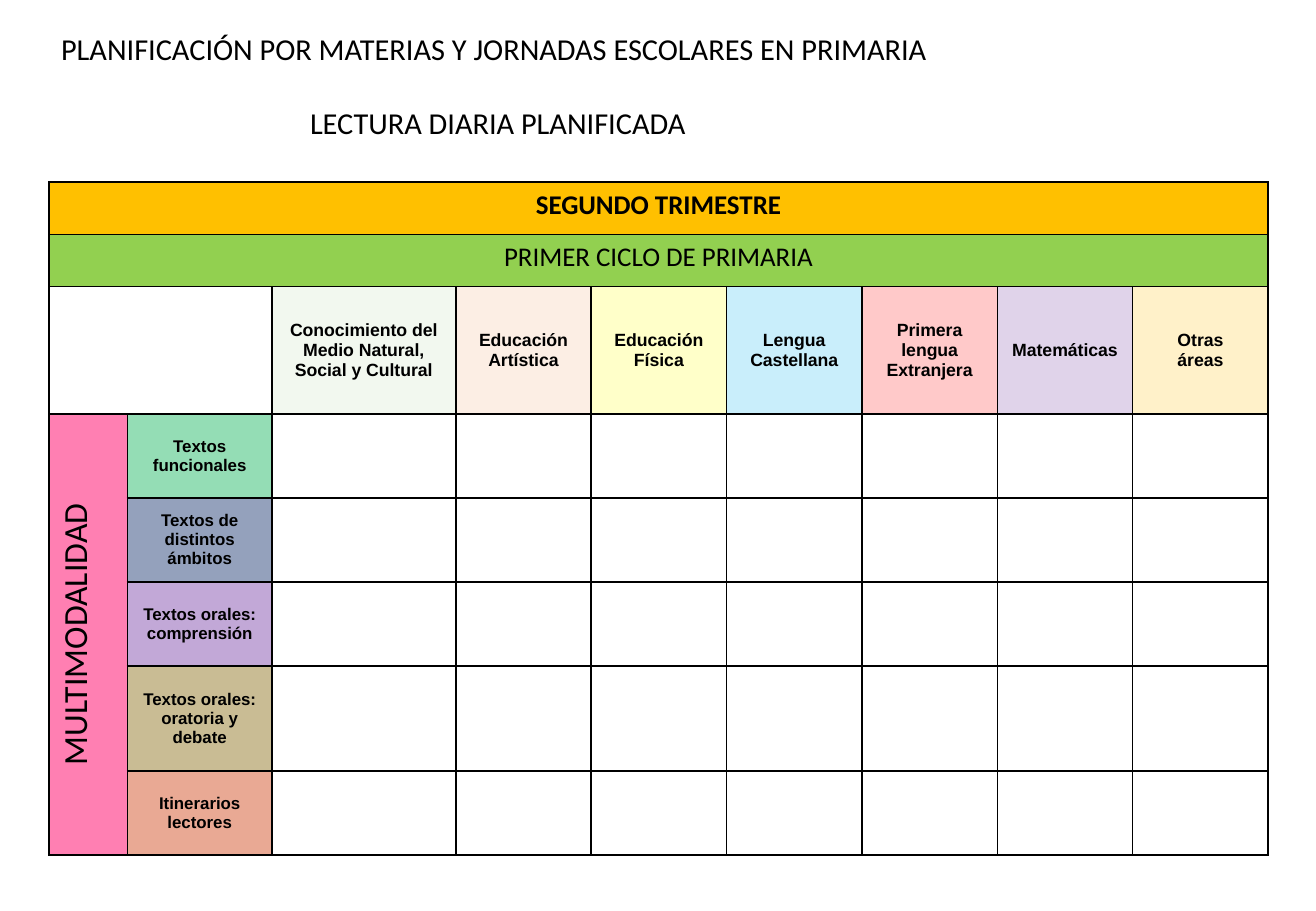
from pptx import Presentation
from pptx.dml.color import RGBColor
from pptx.enum import text
from pptx.oxml import parse_xml
from pptx.oxml import ns
from pptx.util import Pt

COLORS = {
    "ink": "000000", "paper": "FFFFFF", "gold": "FFC000", "lime": "92D050",
    "sage": "C5E0B4", "peach": "F4B183", "yellow": "FFFF00", "sky": "00B0F0",
    "red": "FF0000", "purple": "7030A0", "pink": "FF0066", "green": "00B050",
    "navy": "002060", "olive": "806000", "rust": "CC3300",
}
LEFT = 29
COLUMN_WIDTHS = [46.5, 85.7, 109] + [80.25] * 6
ROW_HEIGHTS = [31, 31, 75.5, 49.8, 49.8, 49.8, 62.2, 49.8]
SUBJECTS = [
    (["Conocimiento del Medio Natural, Social y Cultural"], "sage"),
    (["Educación", "Artística"], "peach"),
    (["Educación Física"], "yellow"),
    (["Lengua Castellana"], "sky"),
    (["Primera lengua Extranjera"], "red"),
    (["Matemáticas"], "purple"),
    (["Otras", "áreas"], "gold"),
]
TEXT_KINDS = [
    (["Textos", "funcionales"], "green"),
    (["Textos de distintos ámbitos"], "navy"),
    (["Textos orales: comprensión"], "purple"),
    (["Textos orales: oratoria y debate"], "olive"),
    (["Itinerarios lectores"], "rust"),
]


def write_lines(frame, lines, size, font, bold=False, align=text.PP_ALIGN.CENTER):
    """Write one paragraph for each line and return the paragraphs."""
    paras = []
    for index, line in enumerate(lines):
        para = frame.add_paragraph() if index else frame.paragraphs[0]
        para.alignment = align
        span = para.add_run()
        span.text = line
        span.font.size = Pt(size)
        span.font.name = font
        span.font.bold = bold
        span.font.color.rgb = RGBColor.from_string(COLORS["ink"])
        paras.append(para)
    return paras


def fill_cell(cell, color, opacity=100):
    cell.fill.solid()
    cell.fill.fore_color.rgb = RGBColor.from_string(COLORS[color])
    if opacity < 100:
        tint = cell._tc.tcPr.find(".//" + ns.qn("a:solidFill") + "[last()]/" + ns.qn("a:srgbClr"))
        tint = cell._tc.tcPr.find(ns.qn("a:solidFill")).find(ns.qn("a:srgbClr"))
        tint.append(parse_xml(f'<a:alpha {ns.nsdecls("a")} val="{opacity * 1000}"/>'))


def border_cell(cell):
    properties = cell._tc.get_or_add_tcPr()
    for side in ("lnL", "lnR", "lnT", "lnB"):
        properties.append(parse_xml(
            f'<a:{side} {ns.nsdecls("a")} w="{Pt(1)}"><a:solidFill>'
            f'<a:srgbClr val="{COLORS["ink"]}"/></a:solidFill></a:{side}>'))


def label_cell(cell, lines, size, color, opacity):
    cell.vertical_anchor = text.MSO_ANCHOR.MIDDLE
    write_lines(cell.text_frame, lines, size, "Arial", bold=True)
    fill_cell(cell, color, opacity)


def add_heading(page):
    title = page.shapes.title
    title.left, title.top, title.width, title.height = Pt(LEFT), Pt(14.4), Pt(722), Pt(73)
    frame = title.text_frame
    frame.word_wrap = True
    frame.auto_size = text.MSO_AUTO_SIZE.NONE
    frame.vertical_anchor = text.MSO_ANCHOR.TOP
    frame.margin_right = Pt(197)
    lines = ["PLANIFICACIÓN POR MATERIAS Y JORNADAS ESCOLARES EN PRIMARIA",
             "LECTURA DIARIA PLANIFICADA"]
    first, second = write_lines(frame, lines, 18, "Calibri")
    first.alignment = text.PP_ALIGN.LEFT
    second.space_before = Pt(22)


def add_grid(page):
    """Add the bordered, blank planning table."""
    grid = page.shapes.add_table(
        len(ROW_HEIGHTS), len(COLUMN_WIDTHS), Pt(LEFT), Pt(108),
        Pt(sum(COLUMN_WIDTHS)), Pt(sum(ROW_HEIGHTS))).table
    grid.first_row = grid.horz_banding = False
    for column, width in zip(grid.columns, COLUMN_WIDTHS):
        column.width = Pt(width)
    for row, height in zip(grid.rows, ROW_HEIGHTS):
        row.height = Pt(height)
    for cell in grid.iter_cells():
        border_cell(cell)
        fill_cell(cell, "paper")
    return grid


def fill_grid(grid):
    banners = [("SEGUNDO TRIMESTRE", "gold", True), ("PRIMER CICLO DE PRIMARIA", "lime", False)]
    for row, (wording, color, bold) in enumerate(banners):
        banner = grid.cell(row, 0)
        banner.merge(grid.cell(row, len(COLUMN_WIDTHS) - 1))
        write_lines(banner.text_frame, [wording], 16, "Calibri", bold)
        fill_cell(banner, color)

    grid.cell(2, 0).merge(grid.cell(2, 1))
    for column, (lines, color) in enumerate(SUBJECTS, start=2):
        label_cell(grid.cell(2, column), lines, 10.5, color, 21)
    for row, (lines, color) in enumerate(TEXT_KINDS, start=3):
        label_cell(grid.cell(row, 1), lines, 10, color, 42)

    mode = grid.cell(3, 0)
    mode.merge(grid.cell(len(ROW_HEIGHTS) - 1, 0))
    mode.vertical_anchor = text.MSO_ANCHOR.MIDDLE
    mode._tc.tcPr.set("vert", "vert270")
    write_lines(mode.text_frame, ["MULTIMODALIDAD"], 20, "Calibri")
    fill_cell(mode, "pink", 50)


def main():
    deck = Presentation()
    deck.slide_width, deck.slide_height = Pt(780), Pt(540)
    page = deck.slides.add_slide(deck.slide_layouts[5])
    add_heading(page)
    fill_grid(add_grid(page))
    deck.save("out.pptx")


if __name__ == "__main__":
    main()
